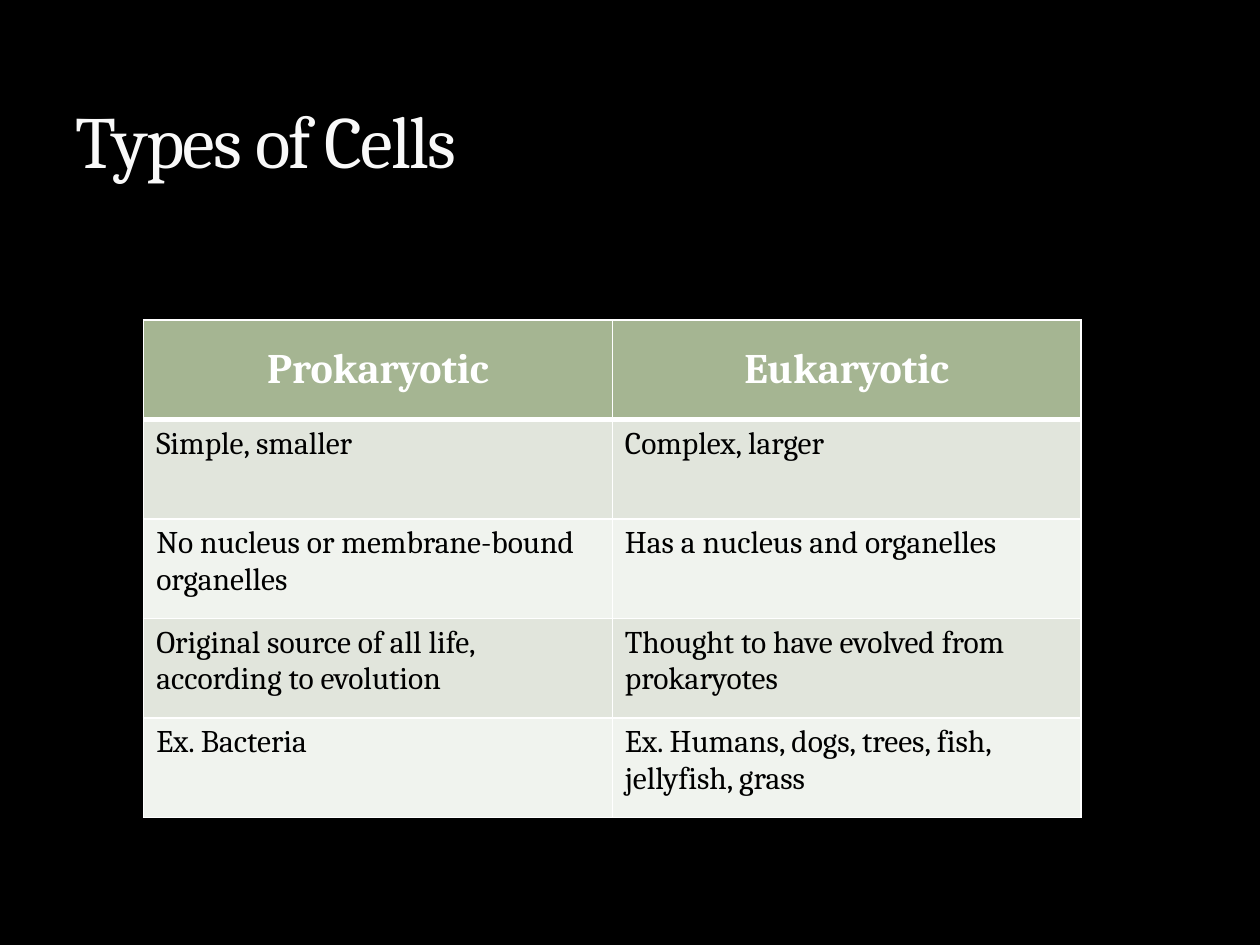
from lxml.etree import SubElement
from pptx import Presentation
from pptx.dml.color import RGBColor
from pptx.enum.text import MSO_ANCHOR, PP_ALIGN
from pptx.oxml.ns import qn
from pptx.util import Inches, Pt

COLORS = {
    "background": "000000",
    "title": "F9F9F9",
    "header": "A5B592",
    "band_dark": "E1E5DC",
    "band_light": "F0F3EE",
    "white": "FFFFFF",
    "black": "000000",
}

CELL_TYPES = [
    ("Prokaryotic", "Eukaryotic"),
    ("Simple, smaller", "Complex, larger"),
    ("No nucleus or membrane-bound organelles", "Has a nucleus and organelles"),
    ("Original source of all life, according to evolution",
     "Thought to have evolved from prokaryotes"),
    ("Ex. Bacteria", "Ex. Humans, dogs, trees, fish, jellyfish, grass"),
]


class SlideBuilder:
    """Holds the style and the current slide, and adds elements to it."""

    def __init__(self, slide, font="Cambria"):
        self.slide = slide
        self.font = font

    def color(self, name):
        return RGBColor.from_string(COLORS[name])

    def background(self, color):
        fill = self.slide.background.fill
        fill.solid()
        fill.fore_color.rgb = self.color(color)

    def style(self, paragraph, size, color, bold=False):
        font = paragraph.font
        font.name = self.font
        font.size = Pt(size)
        font.bold = bold
        font.color.rgb = self.color(color)

    def title(self, text, left, top, width, height):
        box = self.slide.shapes.add_textbox(
            Inches(left), Inches(top), Inches(width), Inches(height))
        frame = box.text_frame
        frame.word_wrap = True
        frame.vertical_anchor = MSO_ANCHOR.BOTTOM
        paragraph = frame.paragraphs[0]
        run = paragraph.add_run()
        run.text = text
        self.style(paragraph, 42, "title")
        run.font._element.set("spc", "-100")

    def border(self, cell, side, width):
        properties = cell._tc.get_or_add_tcPr()
        line = SubElement(properties, qn(f"a:ln{side}"), w=str(Pt(width)))
        fill = SubElement(line, qn("a:solidFill"))
        SubElement(fill, qn("a:srgbClr"), val=COLORS["white"])

    def cell(self, cell, text, row):
        is_header = row == 0
        cell.text = text
        paragraph = cell.text_frame.paragraphs[0]
        if is_header:
            cell.vertical_anchor = MSO_ANCHOR.MIDDLE
            paragraph.alignment = PP_ALIGN.CENTER
            self.style(paragraph, 24, "white", bold=True)
            fill_color = "header"
        else:
            self.style(paragraph, 18, "black")
            fill_color = "band_dark" if row % 2 else "band_light"
        widths = {"L": 1, "R": 1, "T": 3 if row == 1 else 1, "B": 3 if is_header else 1}
        for side, width in widths.items():
            self.border(cell, side, width)
        cell.fill.solid()
        cell.fill.fore_color.rgb = self.color(fill_color)

    def table(self, rows, left, top, column_width, row_height):
        row_count, column_count = len(rows), len(rows[0])
        table = self.slide.shapes.add_table(
            row_count, column_count, Inches(left), Inches(top),
            Inches(column_width * column_count), Inches(row_height * row_count)).table
        for row, texts in enumerate(rows):
            for column, text in enumerate(texts):
                self.cell(table.cell(row, column), text, row)


def main():
    presentation = Presentation()
    presentation.slide_width = Inches(10)
    presentation.slide_height = Inches(7.5)
    builder = SlideBuilder(presentation.slides.add_slide(presentation.slide_layouts[6]))
    builder.background("background")
    builder.table(CELL_TYPES, 1.14, 2.54, 3.72, 0.79)
    builder.title("Types of Cells", 0.5, 0.17, 9, 1.33)
    presentation.save("out.pptx")


if __name__ == "__main__":
    main()
